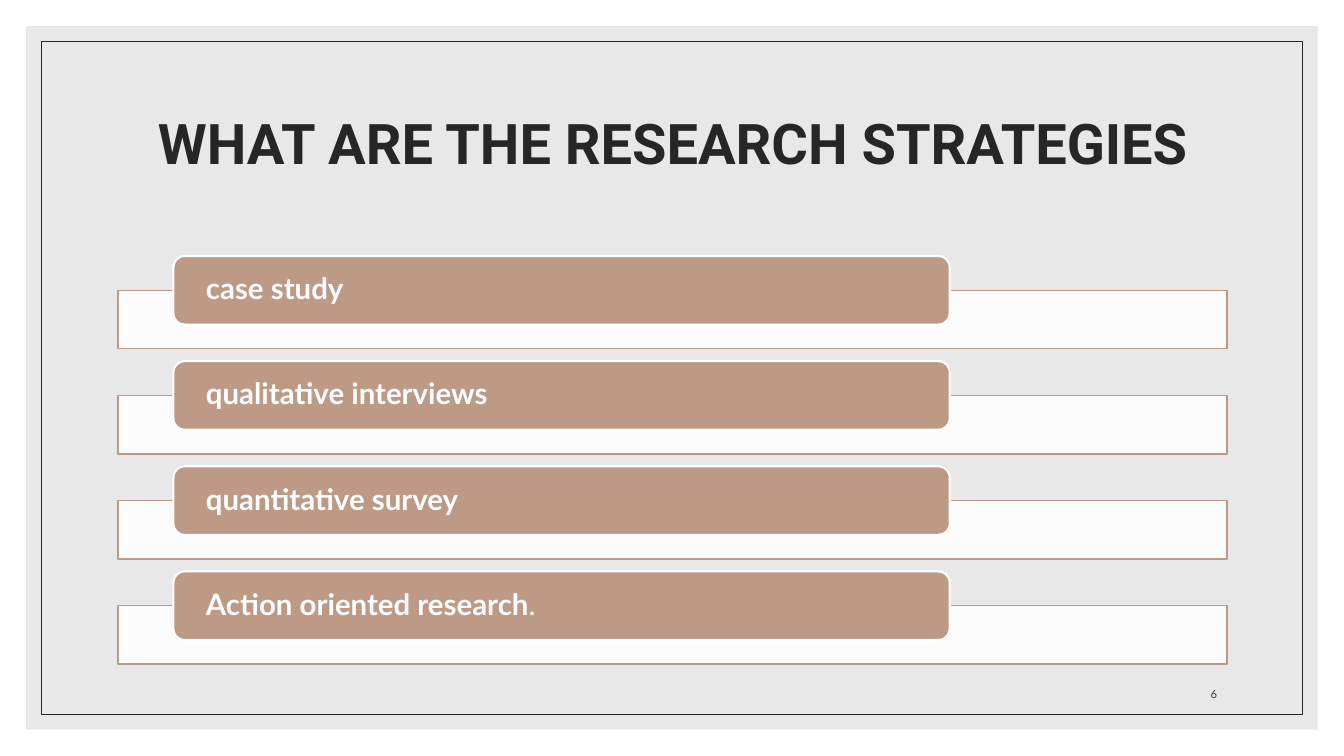
from lxml.etree import SubElement
from pptx import Presentation
from pptx.dml.color import RGBColor
from pptx.enum.shapes import MSO_SHAPE
from pptx.enum.text import MSO_ANCHOR, PP_ALIGN
from pptx.oxml.ns import qn
from pptx.util import Inches, Pt

TITLE = "WHAT ARE THE RESEARCH STRATEGIES"
PAGE_NUMBER = "6"
STRATEGIES = [
    [("case study", True)],
    [("qualitative interviews", True)],
    [("quantitative survey", True)],
    [("Action oriented research", True), (".", False)],
]
WHITE, GREY, DARK, NUMBER_GREY, TAN = "FFFFFF", "D9D9D9", "262626", "404040", "BD9A85"

WIDTH, HEIGHT = 13.33, 7.5
PANEL_MARGIN, FRAME_MARGIN = 0.26, 0.41
CONTENT_LEFT, CONTENT_WIDTH = 1.17, 11
ROW_TOP, ROW_STEP = 2.54, 1.043
LABEL_HEIGHT, BAR_HEIGHT = 0.68, 0.58
LABEL_LEFT = CONTENT_LEFT + CONTENT_WIDTH * 0.05
LABEL_WIDTH = CONTENT_WIDTH * 0.7


def color(value):
    return RGBColor.from_string(value)


def inset(margin):
    return margin, margin, WIDTH - 2 * margin, HEIGHT - 2 * margin


def add_box(slide, box, fill=None, opacity=100, line=None, line_width=1, kind=MSO_SHAPE.RECTANGLE):
    shape = slide.shapes.add_shape(kind, *map(Inches, box))
    shape.shadow.inherit = False
    if fill:
        shape.fill.solid()
        shape.fill.fore_color.rgb = color(fill)
        if opacity < 100:
            fill_color = shape.fill._xPr.find(qn("a:solidFill"))[0]
            SubElement(fill_color, qn("a:alpha"), val=str(opacity * 1000))
    else:
        shape.fill.background()
    if line:
        shape.line.color.rgb = color(line)
        shape.line.width = Pt(line_width)
    else:
        shape.line.fill.background()
    return shape


def write(shape, runs, size, font, text_color, align, anchor):
    frame = shape.text_frame
    frame.word_wrap = True
    frame.vertical_anchor = anchor
    paragraph = frame.paragraphs[0]
    paragraph.alignment = align
    paragraph.line_spacing = 0.9
    for text, bold in runs:
        run = paragraph.add_run()
        run.text = text
        run.font.size = Pt(size)
        run.font.name = font
        run.font.bold = bold
        run.font.color.rgb = color(text_color)
    return frame


def add_strategy(slide, row, runs):
    top = ROW_TOP + row * ROW_STEP
    bar = CONTENT_LEFT, top + LABEL_HEIGHT / 2, CONTENT_WIDTH, BAR_HEIGHT
    add_box(slide, bar, WHITE, opacity=90, line=TAN)
    label = add_box(slide, (LABEL_LEFT, top, LABEL_WIDTH, LABEL_HEIGHT), TAN,
                    line=WHITE, line_width=1.5, kind=MSO_SHAPE.ROUNDED_RECTANGLE)
    frame = write(label, runs, 21, "Lato", WHITE, PP_ALIGN.LEFT, MSO_ANCHOR.MIDDLE)
    frame.margin_left = frame.margin_right = Inches(0.29)
    frame.margin_top = frame.margin_bottom = 0


def main():
    presentation = Presentation()
    presentation.slide_width = Inches(WIDTH)
    presentation.slide_height = Inches(HEIGHT)
    slide = presentation.slides.add_slide(presentation.slide_layouts[6])

    add_box(slide, inset(0), WHITE)
    add_box(slide, inset(PANEL_MARGIN), GREY, opacity=60)
    add_box(slide, inset(FRAME_MARGIN), line=DARK, line_width=0.5)

    title = slide.shapes.add_textbox(*map(Inches, (CONTENT_LEFT, 0.7, CONTENT_WIDTH, 1.5)))
    write(title, [(TITLE, True)], 40, "Roboto", DARK, PP_ALIGN.CENTER, MSO_ANCHOR.MIDDLE)
    number = slide.shapes.add_textbox(*map(Inches, (11.25, 6.6, 0.92, 0.4)))
    frame = write(number, [(PAGE_NUMBER, False)], 8, "Lato", NUMBER_GREY,
                  PP_ALIGN.RIGHT, MSO_ANCHOR.BOTTOM)
    frame.paragraphs[0].line_spacing = 1.0
    frame.paragraphs[0].space_after = Pt(6)

    for row, runs in enumerate(STRATEGIES):
        add_strategy(slide, row, runs)

    presentation.save("out.pptx")


if __name__ == "__main__":
    main()
